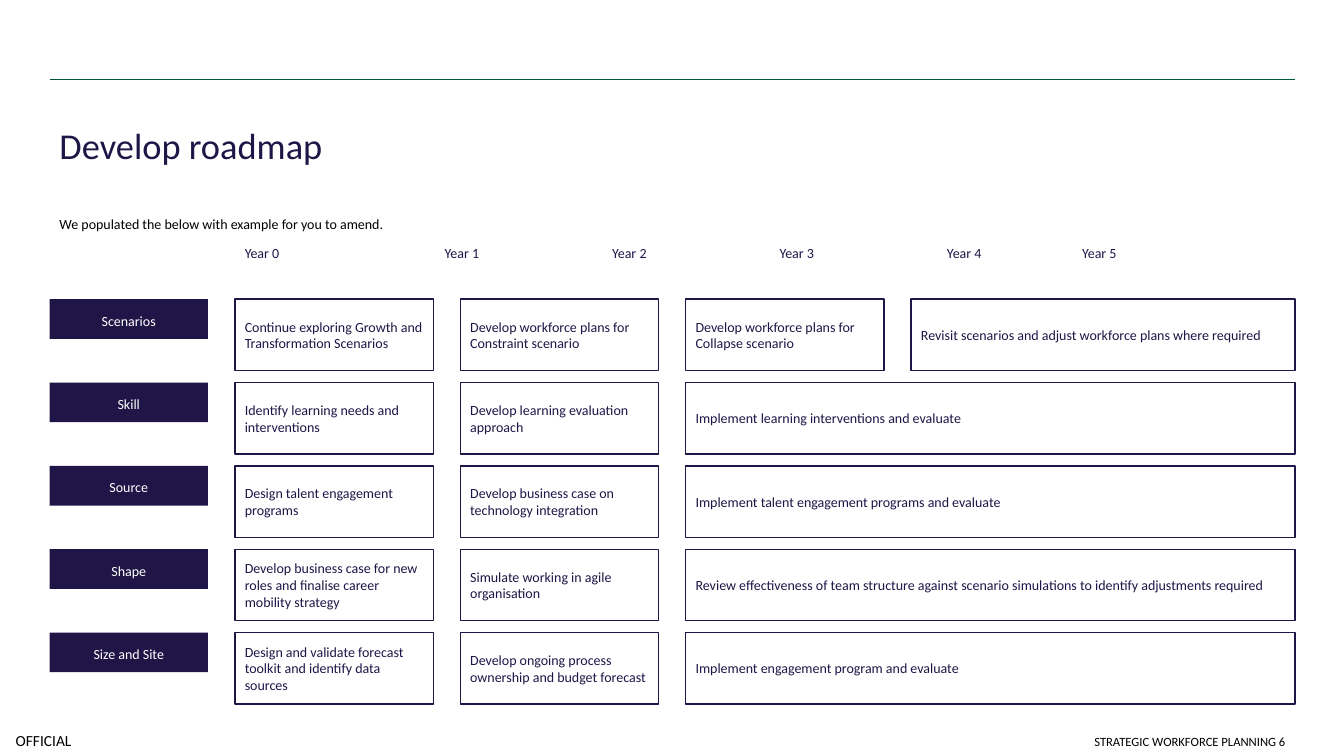
from lxml.etree import SubElement
from pptx import Presentation
from pptx.dml.color import RGBColor
from pptx.enum.shapes import MSO_CONNECTOR as Connector, MSO_SHAPE as Shape
from pptx.enum.text import MSO_ANCHOR as Anchor, PP_ALIGN as Align
from pptx.oxml.ns import qn
from pptx.util import Cm, Pt

TITLE = "Develop roadmap"
INTRO = "We populated the below with example for you to amend."
MARKING = "OFFICIAL"
FOOTER = "STRATEGIC WORKFORCE PLANNING 6"
YEARS = [
    ("Year 0", Align.LEFT),
    ("Year 1", Align.CENTER),
    ("Year 2", Align.CENTER),
    ("Year 3", Align.CENTER),
    ("Year 4", Align.CENTER),
    ("Year 5", Align.LEFT),
]
ROADMAP = {
    "Scenarios": [
        "Continue exploring Growth and Transformation Scenarios",
        "Develop workforce plans for Constraint scenario",
        "Develop workforce plans for Collapse scenario",
        "Revisit scenarios and adjust workforce plans where required",
    ],
    "Skill": [
        "Identify learning needs and interventions",
        "Develop learning evaluation approach",
        "Implement learning interventions and evaluate",
    ],
    "Source": [
        "Design talent engagement programs",
        "Develop business case on technology integration",
        "Implement talent engagement programs and evaluate",
    ],
    "Shape": [
        "Develop business case for new roles and finalise career mobility strategy",
        "Simulate working in agile organisation",
        "Review effectiveness of team structure against scenario simulations "
        "to identify adjustments required",
    ],
    "Size and Site": [
        "Design and validate forecast toolkit and identify data sources",
        "Develop ongoing process ownership and budget forecast",
        "Implement engagement program and evaluate",
    ],
}
COLORS = {"navy": "201547", "green": "00573F", "white": "FFFFFF", "black": "000000"}
FONT = "Calibri"

LEFT, RIGHT = 1.25, 32.64
FULL_WIDTH = RIGHT - LEFT
GRID_LEFT, GRID_TOP = 5.92, 7.54
COLUMN_STEP, ROW_STEP = 5.68, 2.1
BOX_WIDTH, BOX_HEIGHT = 5, 1.8
LABEL_WIDTH, LABEL_HEIGHT = 3.99, 1
YEAR_TOP, YEAR_STEP, YEAR_WIDTH, YEAR_HEIGHT = 5.99, 4.22, 3, 0.79

NO_MARGINS = dict.fromkeys(["margin_left", "margin_top", "margin_right", "margin_bottom"], 0)
LABEL_FORMAT = {"alignment": Align.CENTER, "line_spacing": 1.2, "space_after": Pt(9)}


def color(name):
    return RGBColor.from_string(COLORS[name])


def set_all(target, values):
    for name, value in values.items():
        setattr(target, name, value)


def write(shape, text, size=10, ink="navy", frame=None, **paragraph_format):
    text_frame = shape.text_frame
    set_all(text_frame, {"word_wrap": True, "vertical_anchor": Anchor.MIDDLE, **(frame or {})})
    paragraph = text_frame.paragraphs[0]
    set_all(paragraph, {"alignment": Align.LEFT, **paragraph_format})
    run = paragraph.add_run()
    run.text = text
    set_all(run.font, {"name": FONT, "size": Pt(size)})
    run.font.color.rgb = color(ink)


def add_text(slide, box, text, **text_format):
    write(slide.shapes.add_textbox(*map(Cm, box)), text, **text_format)


def add_box(slide, box, text, fill, outline=None, **text_format):
    shape = slide.shapes.add_shape(Shape.RECTANGLE, *map(Cm, box))
    shape.shadow.inherit = False
    shape.fill.solid()
    shape.fill.fore_color.rgb = color(fill)
    if outline:
        shape.line.color.rgb = color(outline)
        shape.line.width = Pt(1)
    else:
        shape.line.fill.background()
    write(shape, text, **text_format)


def add_rule(slide, y):
    rule = slide.shapes.add_connector(Connector.STRAIGHT, Cm(LEFT), Cm(y), Cm(RIGHT), Cm(y))
    rule.line.color.rgb = color("green")
    rule.line.width = Pt(1)
    SubElement(rule._element.spPr, qn("a:effectLst"))


def add_years(slide):
    for index, (year, alignment) in enumerate(YEARS):
        x = GRID_LEFT + index * YEAR_STEP
        add_text(slide, (x, YEAR_TOP, YEAR_WIDTH, YEAR_HEIGHT), year, alignment=alignment)


def add_roadmap(slide):
    for row, (label, steps) in enumerate(ROADMAP.items()):
        y = GRID_TOP + row * ROW_STEP
        add_box(slide, (LEFT, y, LABEL_WIDTH, LABEL_HEIGHT), label, "navy",
                ink="white", frame=NO_MARGINS, **LABEL_FORMAT)
        for column, step in enumerate(steps):
            x = GRID_LEFT + column * COLUMN_STEP
            width = RIGHT - x if column == len(steps) - 1 else BOX_WIDTH
            add_box(slide, (x, y, width, BOX_HEIGHT), step, "white", "navy")


def main():
    presentation = Presentation()
    set_all(presentation, {"slide_width": Cm(33.87), "slide_height": Cm(19.05)})
    slide = presentation.slides.add_slide(presentation.slide_layouts[6])
    add_rule(slide, 2)
    add_text(slide, (0, 18.26, 2.2, 0.79), MARKING, size=11, ink="black",
             frame=NO_MARGINS, alignment=Align.CENTER)
    add_text(slide, (LEFT, 2.26, FULL_WIDTH, 2.59), TITLE, size=26, line_spacing=1.2)
    add_text(slide, (LEFT, 5.23, FULL_WIDTH, 0.79), INTRO, ink="black",
             frame={"vertical_anchor": Anchor.TOP}, line_spacing=1.2)
    add_years(slide)
    add_roadmap(slide)
    add_text(slide, (17.36, 18.01, 15.28, 1), FOOTER, size=9, ink="black",
             frame={"vertical_anchor": Anchor.BOTTOM}, alignment=Align.RIGHT)
    presentation.save("out.pptx")


if __name__ == "__main__":
    main()
